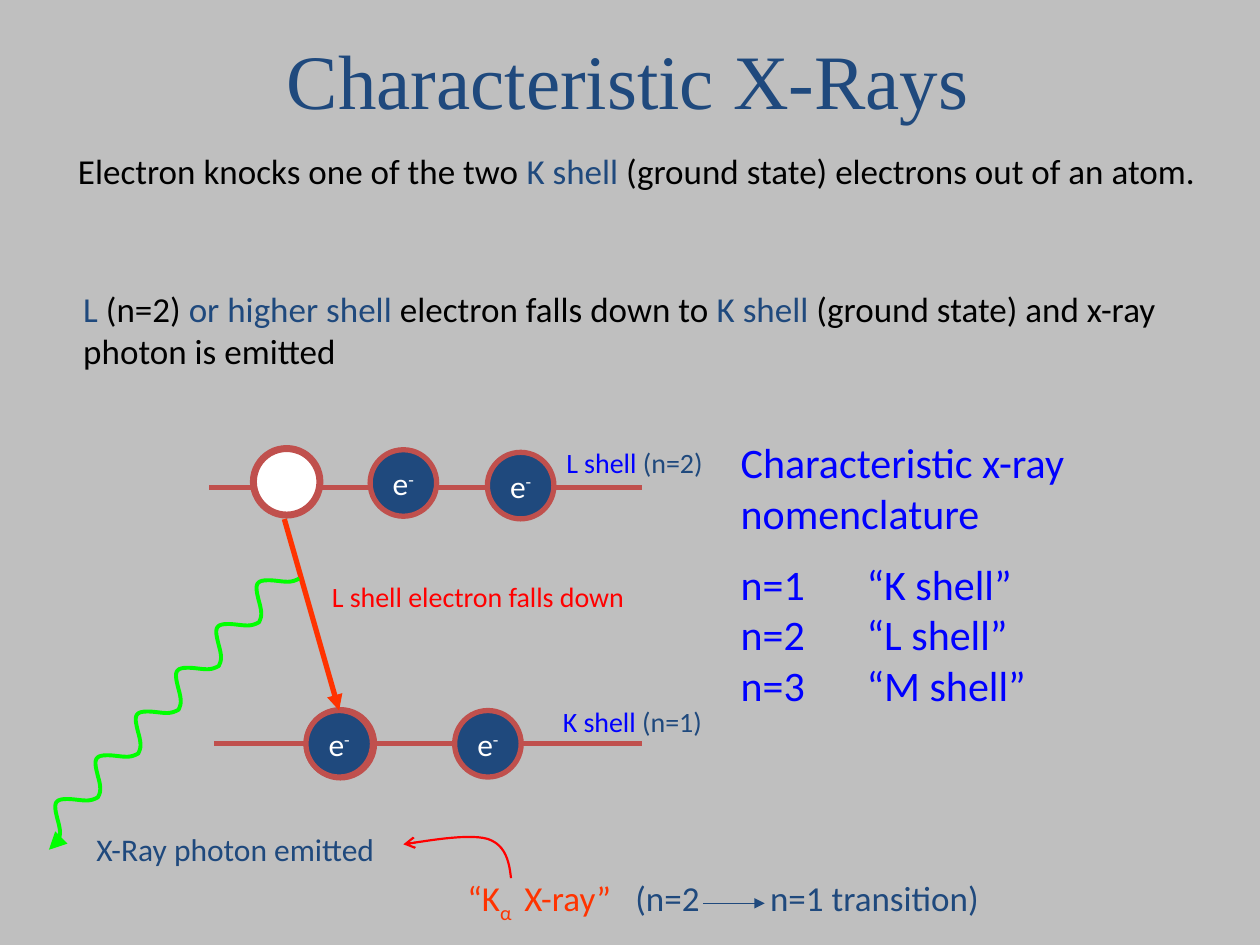
from dataclasses import dataclass

from lxml.etree import SubElement
from pptx import Presentation
from pptx.dml.color import RGBColor
from pptx.enum.shapes import MSO_CONNECTOR, MSO_SHAPE
from pptx.enum.text import MSO_ANCHOR, MSO_AUTO_SIZE, PP_ALIGN
from pptx.oxml.ns import qn
from pptx.util import Pt


@dataclass(frozen=True)
class Theme:
    background: str = "BFBFBF"
    navy: str = "1F497D"
    blue: str = "0000FF"
    black: str = "000000"
    white: str = "FFFFFF"
    brick: str = "C0504D"
    red: str = "FF0000"
    orange: str = "FF3300"
    green: str = "00FF00"
    heading_font: str = "Times New Roman"
    body_font: str = "Calibri"
    title_size: int = 44
    list_size: int = 24
    text_size: int = 20
    caption_size: int = 18
    label_size: int = 16


THEME = Theme()
ELECTRON_SIZE = 38


def rgb(color):
    return RGBColor.from_string(color)


def place(shape, left, top, width, height):
    shape.left, shape.top = Pt(left), Pt(top)
    shape.width, shape.height = Pt(width), Pt(height)


def style_line(shape, color, width, arrowhead=None, size="med"):
    """Style a line or outline without effects, with an optional head at its end."""
    shape.line.color.rgb = rgb(color)
    shape.line.width = Pt(width)
    properties = shape._element.spPr
    if properties.find(qn("a:effectLst")) is None:
        SubElement(properties, qn("a:effectLst"))
    if arrowhead:
        SubElement(properties.find(qn("a:ln")), qn("a:tailEnd"),
                   type=arrowhead, w=size, len=size)


def add_line(slide, start, end, *style):
    x1, y1, x2, y2 = (Pt(value) for value in (*start, *end))
    line = slide.shapes.add_connector(MSO_CONNECTOR.STRAIGHT, x1, y1, x2, y2)
    style_line(line, *style)
    return line


def add_curve(slide, left, top, start, segments, *style):
    """Draw an open outline through cubic segments of (control, control, end)."""
    points, steps = [start], 12
    for first, second, end in segments:
        corners = (points[-1], first, second, end)
        for step in range(1, steps + 1):
            t = step / steps
            weights = ((1 - t) ** 3, 3 * t * (1 - t) ** 2, 3 * t * t * (1 - t), t ** 3)
            points.append(tuple(sum(w * corner[axis] for w, corner in zip(weights, corners))
                                for axis in (0, 1)))
    points = [(Pt(left + x), Pt(top + y)) for x, y in points]
    builder = slide.shapes.build_freeform(*points[0])
    builder.add_line_segments(points[1:], close=False)
    curve = builder.convert_to_shape()
    curve.fill.background()
    style_line(curve, *style)


def fill_paragraph(paragraph, runs, size):
    """Write (text, colour) runs in the body font."""
    paragraph.font.name = THEME.body_font
    paragraph.font.size = Pt(size)
    for text, color in runs:
        run = paragraph.add_run()
        run.text = text
        run.font.color.rgb = rgb(color)


def set_tabs(paragraph, *positions):
    tabs = SubElement(paragraph._p.get_or_add_pPr(), qn("a:tabLst"))
    for position in positions:
        SubElement(tabs, qn("a:tab"), pos=str(Pt(position)), algn="l")


def add_text(slide, left, top, width, height, runs, size):
    box = slide.shapes.add_textbox(Pt(left), Pt(top), Pt(width), Pt(height))
    box.text_frame.word_wrap = True
    paragraph = box.text_frame.paragraphs[0]
    fill_paragraph(paragraph, runs, size)
    return paragraph


def add_electron(slide, left, top, color=THEME.navy, outline=3, labelled=True):
    electron = slide.shapes.add_shape(MSO_SHAPE.OVAL, Pt(left), Pt(top),
                                      Pt(ELECTRON_SIZE), Pt(ELECTRON_SIZE))
    electron.shadow.inherit = False
    electron.fill.solid()
    electron.fill.fore_color.rgb = rgb(color)
    style_line(electron, THEME.brick, outline)
    if labelled:
        frame = electron.text_frame
        frame.word_wrap = False
        frame.vertical_anchor = MSO_ANCHOR.MIDDLE
        paragraph = frame.paragraphs[0]
        paragraph.alignment = PP_ALIGN.CENTER
        fill_paragraph(paragraph, [("e", THEME.white), ("-", THEME.white)],
                       THEME.caption_size)
        paragraph.runs[1].font._element.set("baseline", "30000")
    return electron


def build_title(slide, *box):
    title = slide.shapes.title
    place(title, *box)
    title.text_frame.text = "Characteristic X-Rays"
    title.text_frame.vertical_anchor = MSO_ANCHOR.MIDDLE
    paragraph = title.text_frame.paragraphs[0]
    paragraph.alignment = PP_ALIGN.CENTER
    paragraph.font.name = THEME.heading_font
    paragraph.font.size = Pt(THEME.title_size)
    paragraph.font.color.rgb = rgb(THEME.navy)


def build_explanation(slide, left, top, width):
    add_text(slide, left, top, width, 32, [
        ("Electron knocks one of the two ", THEME.black), ("K shell", THEME.navy),
        (" (ground state) electrons out of an atom.", THEME.black)], THEME.text_size)
    add_text(slide, left + 3, top + 79, width - 29, 55, [
        ("L ", THEME.navy), ("(n=2) ", THEME.black), ("or higher shell", THEME.navy),
        (" electron falls down to ", THEME.black), ("K shell", THEME.navy),
        (" (ground state) and x-ray photon is emitted", THEME.black)], THEME.text_size)


def build_nomenclature(slide, *box):
    body = slide.placeholders[1]
    place(body, *box)
    frame = body.text_frame
    frame.auto_size = MSO_AUTO_SIZE.NONE
    lines = ["Characteristic x-ray nomenclature",
             "n=1\t“K shell”", "n=2\t“L shell”", "n=3\t“M shell”"]
    for index, text in enumerate(lines):
        paragraph = frame.add_paragraph() if index else frame.paragraphs[0]
        paragraph.space_before = Pt(12 if index == 1 else 0)
        properties = paragraph._p.get_or_add_pPr()
        properties.set("marL", "0")
        properties.set("indent", "0")
        SubElement(properties, qn("a:buNone"))
        set_tabs(paragraph, 64.5)
        fill_paragraph(paragraph, [(text, THEME.blue)], THEME.list_size)


def build_shells(slide, left, top):
    add_line(slide, (left, top + 28.6), (left + 247.5, top + 28.6), THEME.brick, 3)
    add_line(slide, (left + 3, top + 174.8), (left + 247.5, top + 174.8), THEME.brick, 3)
    add_electron(slide, left + 56, top + 156, THEME.white, 4, labelled=False)
    target = add_electron(slide, left + 55.3, top + 156)
    for x, y in ((92, 7), (159, 8.5), (140.3, 156)):
        add_electron(slide, left + x, top + y)
    for x, y, shell, level in ((197, 1.3, "L shell", " (n=2)"),
                               (195, 149, "K shell", " (n=1)")):
        add_text(slide, left + x, top + y, 110, 27,
                 [(shell, THEME.blue), (level, THEME.navy)], THEME.label_size)
    add_text(slide, left + 63, top + 77.6, 223, 27,
             [("L shell electron falls down", THEME.red)], THEME.label_size)
    fall = add_line(slide, (left + 43, top + 46.6), (left + 75, top + 156),
                    THEME.orange, 3, "triangle")
    fall.end_connect(target, 0)
    add_electron(slide, left + 25.3, top + 6.3, THEME.white, 4, labelled=False)


def build_photon(slide, left, top):
    """Draw the photon as six equal waves running down to the left."""
    wave = (((-6, 3.5), (-10, 1), (-18, 1)),
            ((-26, 1), (-25, 5), (-23, 13)),
            ((-21, 20), (-21.5, 22), (-23, 25)))
    segments = [[(x - 23 * count, y + 25 * count) for x, y in segment]
                for count in range(6) for segment in wave]
    add_curve(slide, left, top, (0, 0), segments, THEME.green, 2.25)
    add_line(slide, (left - 138, top + 150), (left - 143, top + 155),
             THEME.green, 0.75, "triangle", "lg")
    add_text(slide, left - 123, top + 140.3, 181, 29,
             [("X-Ray photon emitted", THEME.navy)], THEME.caption_size)


def build_transition(slide, left, top):
    paragraph = add_text(slide, left, top, 421, 32, [
        ("“K", THEME.orange), ("α ", THEME.orange), (" X-ray”", THEME.orange),
        ("\t(n=2\tn=1 transition)", THEME.navy)], THEME.text_size)
    paragraph.runs[1].font._element.set("baseline", "-25000")
    set_tabs(paragraph, 96, 173)
    add_line(slide, (left + 142, top + 18.7), (left + 177, top + 18.7),
             THEME.navy, 0.75, "triangle")
    add_curve(slide, left, top, (32, 4.3),
              [((31, -5), (29, -14.5), (19, -18)), ((9, -21), (-10, -18), (-29.5, -15))],
              THEME.red, 1.25, "arrow")


def main():
    presentation = Presentation()
    presentation.slide_width, presentation.slide_height = Pt(720), Pt(540)
    slide = presentation.slides.add_slide(presentation.slide_layouts[1])
    slide.background.fill.solid()
    slide.background.fill.fore_color.rgb = rgb(THEME.background)
    build_title(slide, 53, 0, 612, 90)
    build_explanation(slide, 37.5, 82, 657)
    build_nomenclature(slide, 416, 246, 304, 167)
    build_shells(slide, 119.5, 250)
    build_photon(slide, 171, 330.6)
    build_transition(slide, 260, 497.5)
    presentation.save("out.pptx")


if __name__ == "__main__":
    main()
